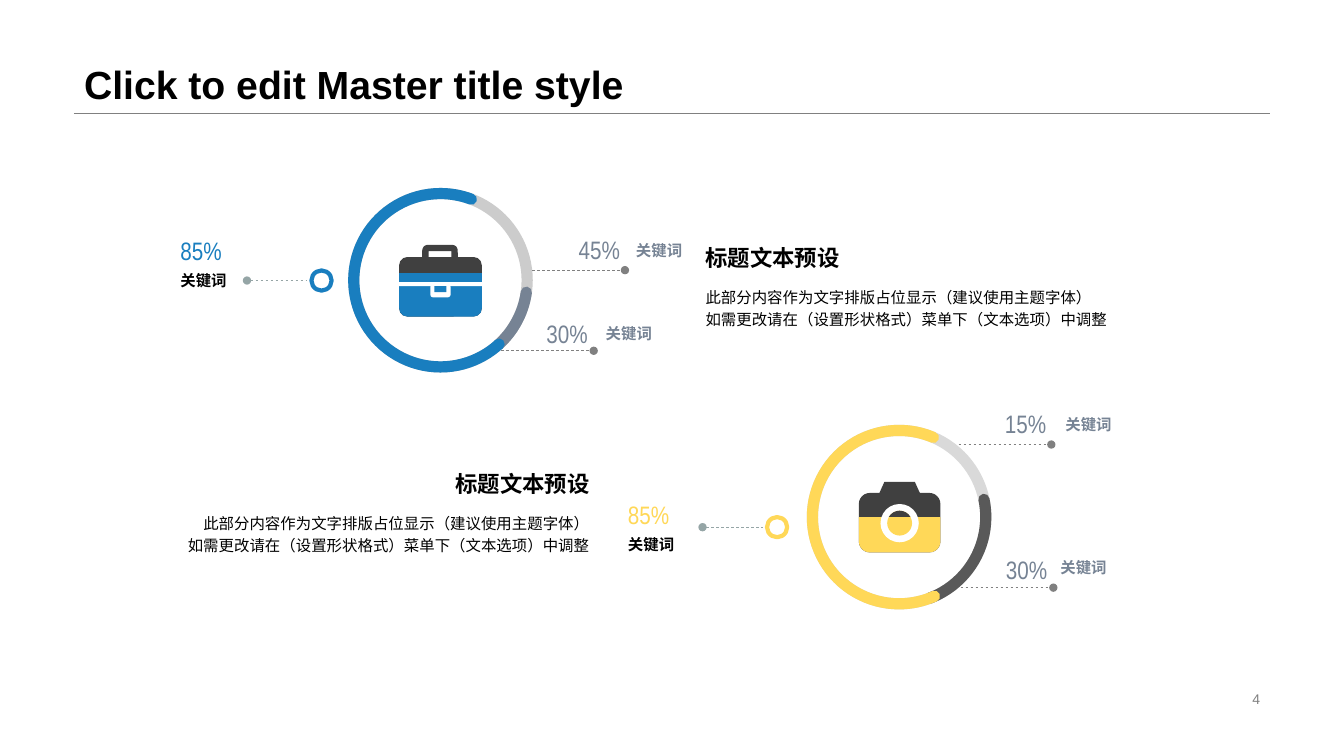
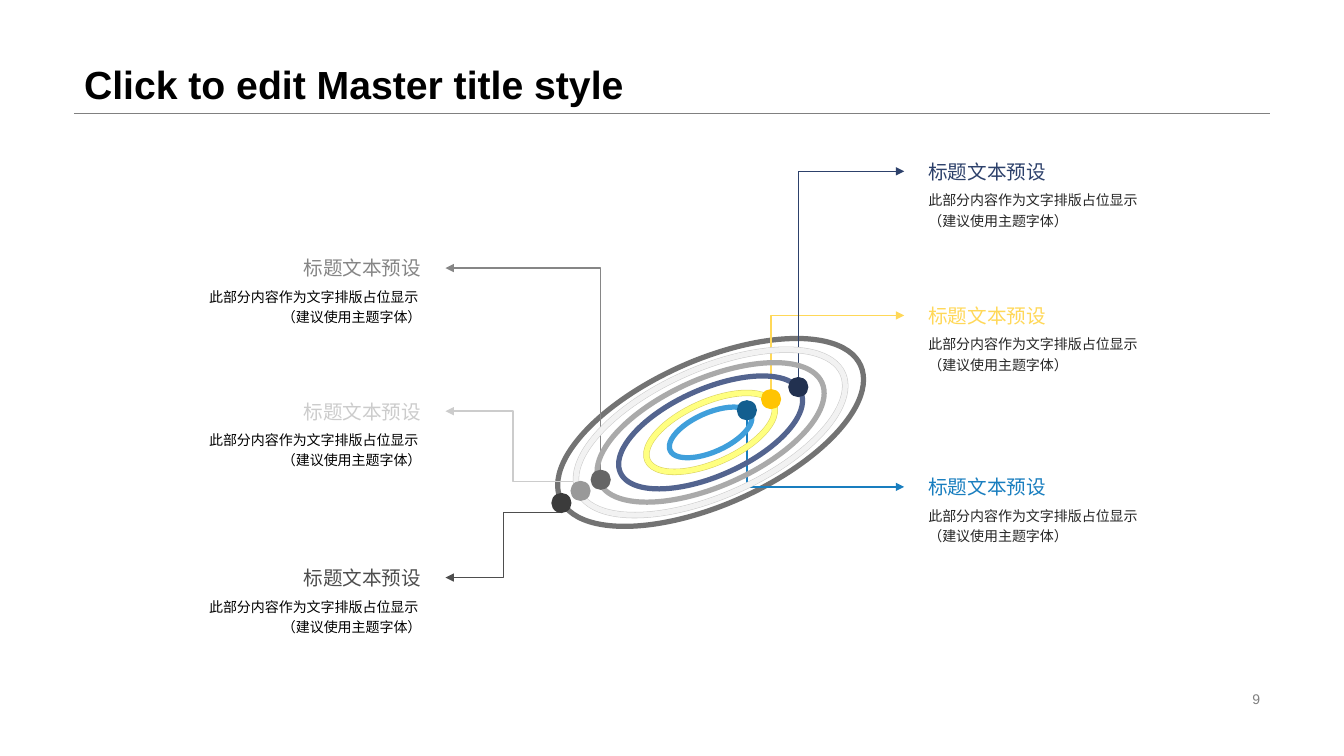
from dataclasses import dataclass

from lxml import etree
from pptx import Presentation
from pptx import util as u
from pptx.dml import color as colors
from pptx.enum import dml, shapes, text
from pptx.oxml import ns

COLUMNS, ROWS = 160, 90
CELL = u.Inches(7.5) / ROWS
SHAPE = shapes.MSO_SHAPE
LEFT, RIGHT = text.PP_ALIGN.LEFT, text.PP_ALIGN.RIGHT
HEADING = "标题文本预设"
KEYWORD = "关键词"


@dataclass(frozen=True)
class Theme:
    font: str = "Arial"
    number_font: str = "Arial Narrow"
    title: int = 28
    value: int = 18
    heading: int = 16
    orbit_heading: int = 14
    body: int = 11
    small: int = 10
    black: str = "000000"
    ink: str = "262626"
    white: str = "FFFFFF"
    rule: str = "808080"
    icon: str = "404040"
    blue: str = "197EBF"
    yellow: str = "FFD858"
    navy: str = "2D416B"
    slate: str = "768394"
    mist: str = "95A5A6"
    silver: str = "CCCCCC"
    pale: str = "D9D9D9"
    gray: str = "868686"
    dim: str = "595959"
    dark: str = "4E4E4E"


THEME = Theme()


@dataclass(frozen=True)
class Callout:
    value: str
    line: tuple
    value_at: tuple
    keyword_at: tuple


@dataclass(frozen=True)
class Orbit:
    color: str
    dot_color: str
    dot: tuple
    side: int
    level: float
    bend: float = 0
    leftward: bool = False


def cells(*lengths):
    return [u.Emu(round(length * CELL)) for length in lengths]


def rgb(value):
    return colors.RGBColor.from_string(value)


def style_span(span, size, color, bold=False, font=THEME.font):
    span.font.name = font
    span.font.size = u.Pt(size)
    span.font.bold = bold
    span.font.color.rgb = rgb(color)


def add_text(page, place, lines, size, color, bold=False, font=THEME.font,
             align=LEFT, spacing=1.0, anchor=text.MSO_ANCHOR.TOP, inset=0):
    box = page.shapes.add_textbox(*cells(*place))
    frame = box.text_frame
    frame.word_wrap = True
    frame.vertical_anchor = anchor
    frame.margin_top = frame.margin_bottom = 0
    frame.margin_left = frame.margin_right = cells(inset)[0]
    para = frame.paragraphs[0]
    para.alignment = align
    para.line_spacing = spacing
    for index, line in enumerate(lines):
        if index:
            para.add_line_break()
        span = para.add_run()
        span.text = line
        style_span(span, size, color, bold, font)


def add_figure(page, kind, place, fill=None, line=None, width=1, adjust=(), turn=0):
    figure = page.shapes.add_shape(kind, *cells(*place))
    figure.shadow.inherit = False
    figure.rotation = turn
    for index, value in enumerate(adjust):
        figure.adjustments[index] = value
    if fill:
        figure.fill.solid()
        figure.fill.fore_color.rgb = rgb(fill)
    else:
        figure.fill.background()
    if line:
        figure.line.color.rgb = rgb(line)
        figure.line.width = u.Pt(width)
    else:
        figure.line.fill.background()
    return figure


def add_circle(page, center, diameter, **style):
    x, y = center
    place = (x - diameter / 2, y - diameter / 2, diameter, diameter)
    return add_figure(page, SHAPE.OVAL, place, **style)


def add_arc(page, center, diameter, start, end, color):
    x, y = center
    place = (x - diameter / 2, y - diameter / 2, diameter, diameter)
    arc = add_figure(page, SHAPE.ARC, place, line=color, width=8,
                     adjust=(start * 0.6, end * 0.6))
    arc.line._get_or_add_ln().set("cap", "rnd")


def add_line(page, start, end, color, width, bend=None, dashed=False, **ends):
    elbow = bend is not None
    kind = shapes.MSO_CONNECTOR.ELBOW if elbow else shapes.MSO_CONNECTOR.STRAIGHT
    line = page.shapes.add_connector(kind, *cells(*start, *end))
    line.line.color.rgb = rgb(color)
    line.line.width = u.Pt(width)
    if dashed:
        line.line.dash_style = dml.MSO_LINE.DASH
    outline = line.line._get_or_add_ln()
    for name, mark in ends.items():
        etree.SubElement(outline, ns.qn(f"a:{name}End")).set("type", mark)
    properties = line._element.spPr
    etree.SubElement(properties, ns.qn("a:effectLst"))
    if elbow:
        guides = properties.find(ns.qn("a:prstGeom")).get_or_add_avLst()
        guide = etree.SubElement(guides, ns.qn("a:gd"))
        guide.set("name", "adj1")
        guide.set("fmla", f"val {round(bend * 100000)}")


def add_page(deck, number):
    page = deck.slides.add_slide(deck.slide_layouts[5])
    add_line(page, (8.8, 13.44), (151.2, 13.44), THEME.rule, 0.25)
    title = page.shapes.title
    title.left, title.top, title.width, title.height = cells(8.8, 0, 142.4, 13.44)
    title.text_frame.vertical_anchor = text.MSO_ANCHOR.BOTTOM
    para = title.text_frame.paragraphs[0]
    para.alignment = LEFT
    para.line_spacing = 0.9
    span = para.add_run()
    span.text = "Click to edit Master title style"
    style_span(span, THEME.title, THEME.black, bold=True)
    add_text(page, (113, 81.84, 38.2, 2.76), [number], THEME.small, THEME.rule,
             align=RIGHT, anchor=text.MSO_ANCHOR.MIDDLE, inset=1.2)
    return page


def add_value(page, at, value, color):
    add_text(page, (*at, 8, 4.32), [value], THEME.value, color, font=THEME.number_font)


def add_keyword(page, at, color):
    add_text(page, (*at, 7.92, 3.48), [KEYWORD], THEME.body, color, bold=True)


def add_dial(page, center, track, arcs, color, marker, label, callouts):
    diameter = 20.64
    add_circle(page, center, diameter, line=track, width=8)
    for start, end, arc_color in arcs:
        add_arc(page, center, diameter, start, end, arc_color)
    x, y = marker
    add_circle(page, marker, 2.4, fill=THEME.white, line=color, width=3)
    add_line(page, (x - 8.88, y), (x - 1.68, y), THEME.mist, 0.5,
             dashed=True, head="oval")
    add_value(page, label, "85%", color)
    add_keyword(page, (label[0], label[1] + 4.32), THEME.black)
    for callout in callouts:
        x, y = callout.line
        add_line(page, (x, y), (x + 11.04, y), THEME.rule, 0.5,
                 dashed=True, tail="oval")
        add_value(page, callout.value_at, callout.value, THEME.slate)
        add_keyword(page, callout.keyword_at, THEME.slate)


def add_icon_body(page, x, y, width, split, color, radius):
    height = 7.08
    lower = height - split
    add_figure(page, SHAPE.ROUNDED_RECTANGLE, (x, y, width, height),
               fill=THEME.icon, adjust=(radius / height,))
    add_figure(page, SHAPE.ROUND_2_SAME_RECTANGLE, (x, y + split, width, lower),
               fill=color, adjust=(radius / lower, 0), turn=180)


def add_briefcase(page, x, y, color):
    add_figure(page, SHAPE.ROUNDED_RECTANGLE, (x + 3.12, y + 0.36, 3.48, 2),
               line=THEME.icon, width=4.5, adjust=(0.15,))
    add_icon_body(page, x, y + 1.44, 9.84, 1.92, color, 0.96)
    add_figure(page, SHAPE.RECTANGLE, (x, y + 4.44, 9.84, 0.48), fill=THEME.white)
    add_figure(page, SHAPE.ROUNDED_RECTANGLE, (x + 3.72, y + 4.68, 2.4, 1.56),
               fill=THEME.white, adjust=(0.2,))
    add_figure(page, SHAPE.RECTANGLE, (x + 4.2, y + 4.92, 1.44, 0.72), fill=color)


def add_camera(page, x, y, color):
    lens = (x + 4.86, y + 4.92)
    add_figure(page, SHAPE.TRAPEZOID, (x + 2.4, y, 4.92, 1.44),
               fill=THEME.icon, adjust=(0.45,))
    add_icon_body(page, x, y + 1.32, 9.72, 2.88, color, 1.32)
    add_circle(page, lens, 4.56, fill=THEME.white)
    add_circle(page, lens, 2.96, fill=color)
    add_figure(page, SHAPE.CHORD, (lens[0] - 1.48, lens[1] - 1.48, 2.96, 2.96),
               fill=THEME.icon, adjust=(210 * 0.6, 330 * 0.6))


def add_summary(page, x, y, width, align):
    lines = ["此部分内容作为文字排版占位显示（建议使用主题字体）",
             "如需更改请在（设置形状格式）菜单下（文本选项）中调整"]
    add_text(page, (x, y, width, 4.8), [HEADING], THEME.heading, THEME.black,
             bold=True, align=align)
    add_text(page, (x, y + 4.85, width, 5.64), lines, THEME.body, THEME.black,
             align=align, spacing=1.2)


def build_dials(deck):
    page = add_page(deck, "4")
    add_summary(page, 84, 29.04, 52.32, LEFT)
    add_briefcase(page, 47.52, 29.16, THEME.blue)
    add_dial(page, (52.44, 33.36), THEME.silver,
             [(7.95, 48.09, THEME.slate), (47.42, 290.88, THEME.blue)],
             THEME.blue, (38.28, 33.4), (21.48, 27.96),
             [Callout("45%", (63.36, 32.16), (68.88, 27.84), (75.72, 28.68)),
              Callout("30%", (59.64, 41.76), (65.04, 37.92), (72.12, 38.64))])
    add_camera(page, 102.24, 57.36, THEME.yellow)
    add_dial(page, (107.04, 61.56), THEME.pale,
             [(348.2, 69.17, THEME.dim), (65.83, 293.34, THEME.yellow)],
             THEME.yellow, (92.52, 62.76), (74.76, 59.4),
             [Callout("15%", (114.12, 52.92), (119.64, 48.6), (126.84, 49.44)),
              Callout("30%", (114.36, 69.96), (119.76, 66), (126.24, 66.48))])
    add_summary(page, 19.8, 55.92, 50.4, RIGHT)


def add_ring(page, diameter, color, edge=None):
    x, y, flat = 84.6, 51.48, diameter * 0.44
    place = (x - diameter / 2, y - flat / 2, diameter, flat)
    if edge:
        add_figure(page, SHAPE.OVAL, place, line=edge, width=4.5, turn=-24)
    add_figure(page, SHAPE.OVAL, place, line=color, width=3.75, turn=-24)


def add_orbit_link(page, orbit):
    x, y = orbit.dot
    end = 53.04 if orbit.leftward else 107.64
    add_line(page, (x, y + orbit.side * 1.1), (end, orbit.level), orbit.color, 1,
             bend=orbit.bend, tail="triangle")


def add_orbit_note(page, orbit):
    x, width = (14.76, 38.28) if orbit.leftward else (107.64, 33.6)
    align = RIGHT if orbit.leftward else LEFT
    ink = THEME.black if orbit.leftward else THEME.ink
    add_text(page, (x, orbit.level - 2.04, width, 4.08), [HEADING],
             THEME.orbit_heading, orbit.color, align=align,
             anchor=text.MSO_ANCHOR.MIDDLE, inset=2.88)
    add_text(page, (x, orbit.level + 2.04, width, 7.32),
             ["此部分内容作为文字排版占位显示 ", "（建议使用主题字体）"],
             THEME.small, ink, align=align, spacing=1.2, inset=2.88)


def build_orbits(deck):
    page = add_page(deck, "9")
    orbits = [
        Orbit(THEME.blue, "135E8F", (88.92, 48.84), 1, 57.96),
        Orbit(THEME.yellow, "FFC402", (91.8, 47.52), -1, 37.56),
        Orbit(THEME.navy, "223150", (95.04, 46.08), -1, 20.4),
        Orbit(THEME.dark, "3B3B3B", (66.84, 59.88), 1, 68.76, 0.5, True),
        Orbit(THEME.silver, "999999", (69.12, 58.44), -1, 48.96, 0.5, True),
        Orbit(THEME.gray, "656565", (71.52, 57.12), -1, 31.92, 0, True),
    ]
    rings = [(34.44, "F2F2F2", THEME.silver), (29.04, "AAAAAA"), (23.52, "53648F"),
             (16.44, "FFFF80", "D9D060"), (10.56, "3F9FDB")]
    add_ring(page, 39.12, "737373")
    for orbit in orbits:
        add_orbit_link(page, orbit)
    for ring in rings:
        add_ring(page, *ring)
    for orbit in orbits:
        add_circle(page, orbit.dot, 2.4, fill=orbit.dot_color)
        add_orbit_note(page, orbit)


def main():
    deck = Presentation()
    deck.slide_width, deck.slide_height = cells(COLUMNS, ROWS)
    build_dials(deck)
    build_orbits(deck)
    deck.save("out.pptx")


if __name__ == "__main__":
    main()
